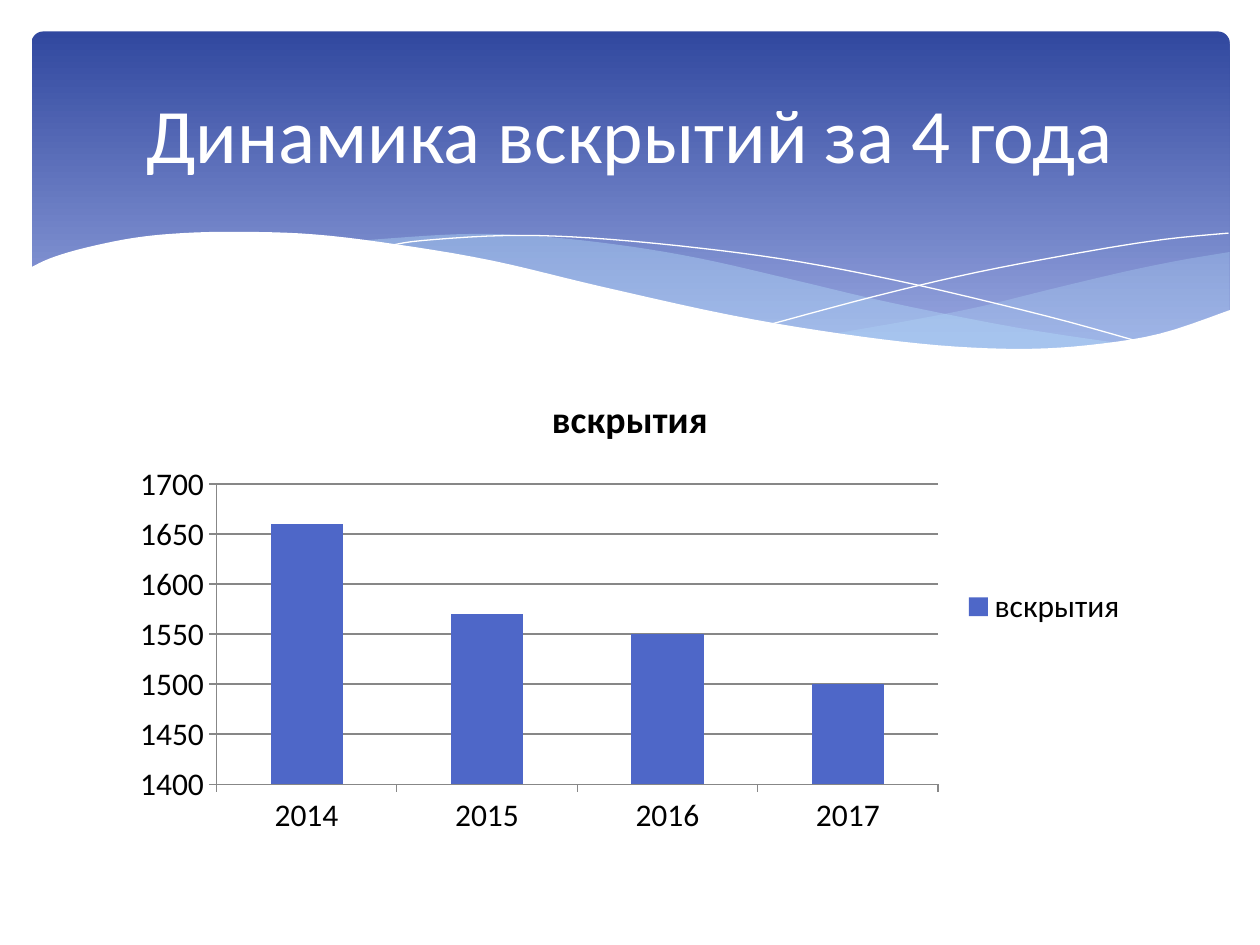
from pptx import Presentation
from pptx.chart.data import CategoryChartData
from pptx.dml.color import RGBColor
from pptx.enum.chart import XL_CHART_TYPE as ChartType, XL_LEGEND_POSITION as LegendPosition
from pptx.enum.chart import XL_TICK_MARK as TickMark
from pptx.enum.shapes import MSO_SHAPE as Shape
from pptx.enum.text import MSO_ANCHOR as Anchor, PP_ALIGN as Align
from pptx.oxml.ns import qn
from pptx.util import Pt
from lxml.etree import SubElement

# Content
TITLE = "Динамика вскрытий за 4 года"
SERIES = "вскрытия"
AUTOPSIES = {"2014": 1660, "2015": 1570, "2016": 1550, "2017": 1500}
FONT = "Calibri"
WHITE, BLACK, GRAY, BLUE, SKY = "FFFFFF", "000000", "878787", "4E67C8", "B4DCFA"

# Waves: each edge is a list of knots that a smooth curve passes through
RIGHT_WAVE = [
    [(702.7, 144), (673, 149), (641.5, 155.5), (599, 165.6), (561, 175), (525, 182.2),
     (476, 190.8)],
    [(476, 190.8), (507.6, 195), (545, 198.7), (586, 200), (628, 197.3), (663, 190.8),
     (702.7, 177.8)],
]
LEFT_WAVE = [
    [(643, 196.6), (581, 187.2), (508.3, 172.8), (453, 159.8), (399.6, 147.6),
     (352, 139.7), (302.4, 134.6), (260, 133.9), (206, 137.5)],
    [(206, 137.5), (246, 143.3), (291, 152), (353.5, 167), (407.5, 178.6), (456.5, 188),
     (500.4, 194.4), (548, 199.4), (589, 200.7), (617, 199.4), (643, 196.6)],
]
FALLING_LINE = [[(222.5, 140.4), (241, 137.5), (288.7, 134.6), (337.7, 136), (400, 141.8),
                 (458, 149.8), (523.4, 162.7), (598.3, 180.7), (653, 195.8)]]
RISING_LINE = [[(441.4, 185), (500.4, 169.2), (558.7, 155.5), (623.5, 143.3),
                (665.3, 136.8), (702, 133.2)]]
WHITE_WAVE = [
    [(703.4, 177), (662.4, 190.8), (621.4, 197.3), (582.5, 199.4), (535.7, 197.3),
     (481, 190.8), (417, 180), (342, 163.4), (281.5, 149), (226.8, 139.7), (180, 134),
     (139, 132.5), (105, 133.2), (76.3, 136), (48, 141.8), (28.8, 147.6), (16.6, 153.4)],
    [(16.6, 236.9), (703.4, 236.9)],
]
# edges, fill, opacity in percent, line
WAVES = [
    (RIGHT_WAVE, SKY, 29, None),
    (LEFT_WAVE, SKY, 40, None),
    (FALLING_LINE, None, 100, WHITE),
    (RISING_LINE, None, 100, WHITE),
    (WHITE_WAVE, WHITE, 100, None),
]


def color(value):
    return RGBColor.from_string(value)


def format_font(font, **values):
    for name, value in {"name": FONT, **values}.items():
        if name == "color":
            font.color.rgb = color(value)
        else:
            setattr(font, name, value)


def smooth(knots, steps=5):
    """Points of a Catmull-Rom curve through the knots."""
    if len(knots) < 3:
        return knots
    padded = [knots[0], *knots, knots[-1]]
    points = [knots[0]]
    for a, b, c, d in zip(padded, padded[1:], padded[2:], padded[3:]):
        for step in range(1, steps + 1):
            t = step / steps
            points.append(tuple(
                (2 * q + (r - p) * t + (2 * p - 5 * q + 4 * r - s) * t ** 2
                 + (3 * q - p - 3 * r + s) * t ** 3) / 2
                for p, q, r, s in zip(a, b, c, d)))
    return points


def add_wave(shapes, edges, fill, opacity, line):
    points = [(Pt(x), Pt(y)) for edge in edges for x, y in smooth(edge)]
    builder = shapes.build_freeform(*points[0], scale=1.0)
    builder.add_line_segments(points[1:], close=fill is not None)
    wave = builder.convert_to_shape()
    wave.shadow.inherit = False
    if fill:
        wave.fill.solid()
        wave.fill.fore_color.rgb = color(fill)
        solid = wave.fill._xPr.find(qn("a:solidFill"))
        SubElement(solid[0], qn("a:alpha"), val=str(opacity * 1000))
    else:
        wave.fill.background()
    if line:
        wave.line.color.rgb = color(line)
        wave.line.width = Pt(0)
    else:
        wave.line.fill.background()


presentation = Presentation()
presentation.slide_width, presentation.slide_height = Pt(720), Pt(540)
slide = presentation.slides.add_slide(presentation.slide_layouts[6])
shapes = slide.shapes

# Gradient banner
banner = shapes.add_shape(Shape.ROUNDED_RECTANGLE, Pt(18), Pt(18), Pt(684.7), Pt(194.4))
banner.adjustments[0] = 0.034
banner.shadow.inherit = False
banner.line.fill.background()
banner.fill.gradient()
banner.fill.gradient_angle = 270
for stop, position, shade in zip(banner.fill.gradient_stops, (0, 0.9), ("31489F", "95A4DE")):
    stop.position = position
    stop.color.rgb = color(shade)

# Waves over the banner
for wave in WAVES:
    add_wave(shapes, *wave)

# Column chart
data = CategoryChartData()
data.categories = list(AUTOPSIES)
data.add_series(SERIES, list(AUTOPSIES.values()))
chart = shapes.add_chart(ChartType.COLUMN_STACKED, Pt(68.4), Pt(211), Pt(583.2), Pt(271.4),
                         data).chart
format_font(chart.font, size=Pt(18), color=BLACK)
chart.has_title = True
chart.chart_title.include_in_layout = False
chart.chart_title.text_frame.text = SERIES
format_font(chart.chart_title.text_frame.paragraphs[0].runs[0].font,
            size=Pt(21.6), bold=True, color=BLACK)
chart.has_legend = True
chart.legend.position = LegendPosition.RIGHT
chart.legend.include_in_layout = False

plot = chart.plots[0]
plot.gap_width, plot.overlap, plot.vary_by_categories = 150, 100, False
columns = plot.series[0].format.fill
columns.solid()
columns.fore_color.rgb = color(BLUE)

value_axis = chart.value_axis
scale = {"minimum_scale": 1400, "maximum_scale": 1700, "major_unit": 50,
         "has_major_gridlines": True}
for name, value in scale.items():
    setattr(value_axis, name, value)
for axis in (chart.category_axis, value_axis):
    axis.major_tick_mark = TickMark.OUTSIDE
    axis.minor_tick_mark = TickMark.NONE
for part in (chart.category_axis, value_axis, value_axis.major_gridlines):
    part.format.line.color.rgb = color(GRAY)
    part.format.line.width = Pt(0.75)

# Title
frame = shapes.add_textbox(Pt(36), Pt(26.6), Pt(648), Pt(98.6)).text_frame
frame.word_wrap = True
frame.vertical_anchor = Anchor.MIDDLE
paragraph = frame.paragraphs[0]
paragraph.alignment = Align.CENTER
paragraph.text = TITLE
format_font(paragraph.runs[0].font, size=Pt(44), color=WHITE)

presentation.save("out.pptx")
